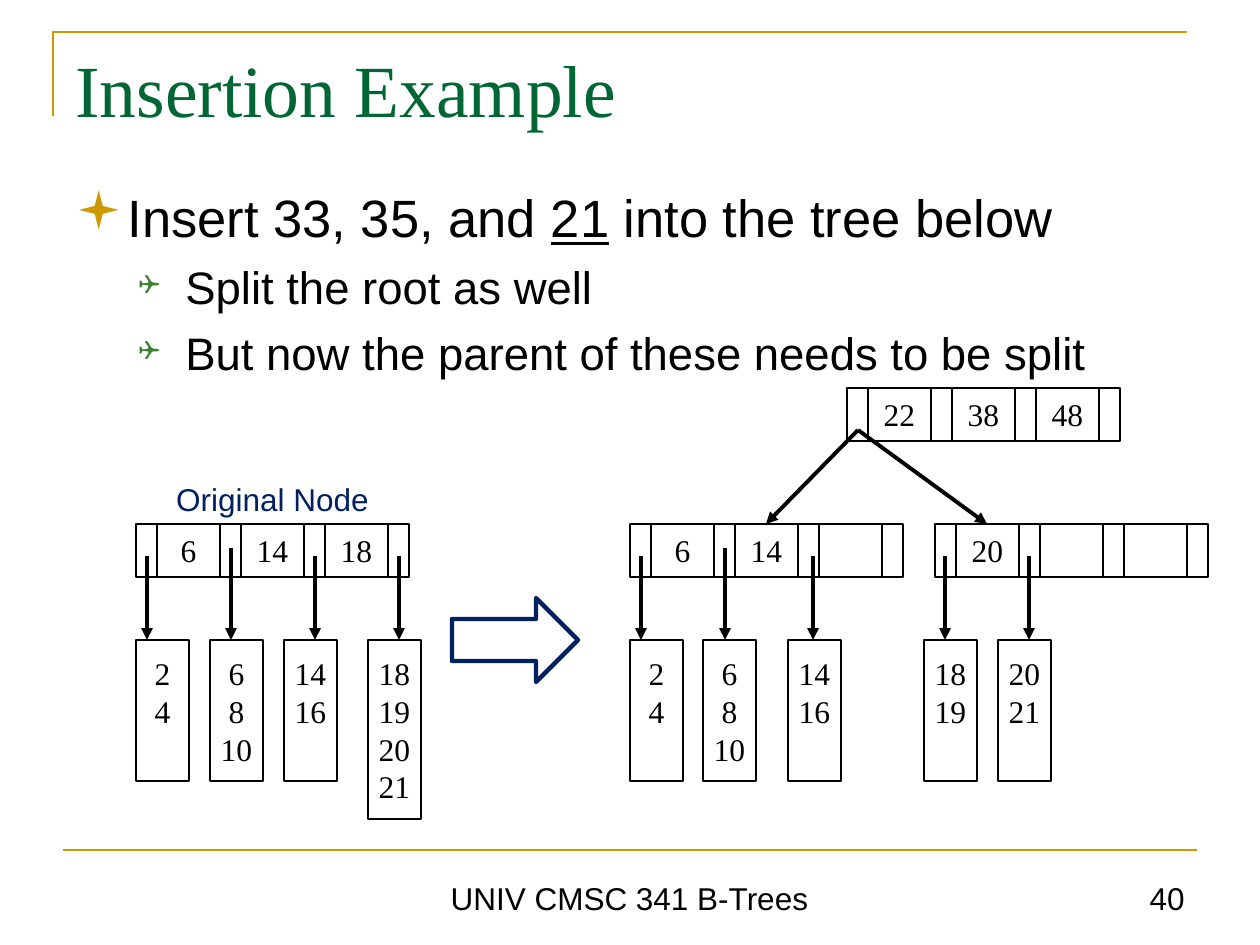
from lxml.etree import SubElement
from pptx import Presentation
from pptx.dml.color import RGBColor
from pptx.enum.shapes import MSO_CONNECTOR as Connector, MSO_SHAPE as Preset
from pptx.enum.text import MSO_ANCHOR as Anchor, PP_ALIGN as Align
from pptx.oxml.ns import qn
from pptx.util import Emu, Pt

SCALE = 914400 / 126
BLACK = RGBColor(0x00, 0x00, 0x00)
GOLD = RGBColor(0xCC, 0x99, 0x00)
DARK_GREEN = RGBColor(0x00, 0x66, 0x33)
LEAF_GREEN = RGBColor(0x3B, 0x81, 0x2F)
NAVY = RGBColor(0x00, 0x20, 0x60)
SANS, SERIF = "Arial", "Times New Roman"

POINTER, KEY, ROW = 21, 63, 53
NODE_TOP, LEAF_TOP = 524, 640
NODES = [
    (136, NODE_TOP, ["6", "14", "18"]),
    (630, NODE_TOP, ["6", "14", ""]),
    (935, NODE_TOP, ["20", "", ""]),
    (847, 388, ["22", "38", "48"]),
]
LEAVES = [
    (136, 147, 556, ["2", "4"]),
    (210, 231, 548, ["6", "8", "10"]),
    (284, 315, 556, ["14", "16"]),
    (368, 399, 556, ["18", "19", "20", "21"]),
    (630, 641, 556, ["2", "4"]),
    (703, 725, 548, ["6", "8", "10"]),
    (788, 813, 556, ["14", "16"]),
    (924, 945, 556, ["18", "19"]),
    (998, 1029, 556, ["20", "21"]),
]
BULLETS = [
    ([("Insert 33, 35, and ", False), ("21", True), (" into the tree below", False)], 0),
    ([("Split the root as well", False)], 1),
    ([("But now the parent of these needs to be split", False)], 1),
]


def px(length):
    """Turn pixels into EMU."""
    return Emu(round(length * SCALE))


def write(para, text, size=18, font=SANS, color=BLACK, align=Align.LEFT, underline=False):
    """Add one formatted span to a paragraph."""
    para.alignment = align
    span = para.add_run()
    span.text = text
    span.font.size = Pt(size)
    span.font.name = font
    span.font.color.rgb = color
    span.font.underline = underline


def add_text_box(page, left, top, width, height, text="", anchor=Anchor.TOP, **style):
    """Add a wrapping text box and return its frame."""
    frame = page.shapes.add_textbox(px(left), px(top), px(width), px(height)).text_frame
    frame.word_wrap = True
    frame.vertical_anchor = anchor
    if text:
        write(frame.paragraphs[0], text, **style)
    return frame


def outline(shape, color, width):
    """Leave a shape hollow with a plain line."""
    shape.shadow.inherit = False
    shape.fill.background()
    shape.line.color.rgb = color
    shape.line.width = Pt(width)


def add_cell(page, left, top, width, height, values=(), anchor=Anchor.MIDDLE, inset=6):
    """Add a rectangle that lists values one per line."""
    cell = page.shapes.add_shape(Preset.RECTANGLE, px(left), px(top), px(width), px(height))
    outline(cell, BLACK, 0.75)
    frame = cell.text_frame
    frame.word_wrap = False
    frame.vertical_anchor = anchor
    frame.margin_top = px(inset)
    for index, value in enumerate(values):
        para = frame.add_paragraph() if index else frame.paragraphs[0]
        write(para, value, font=SERIF, align=Align.CENTER)


def add_line(page, start, end, color=BLACK, width=2.25, arrow=True):
    """Add a straight line, with an arrowhead at its end if wanted."""
    line = page.shapes.add_connector(Connector.STRAIGHT, *map(px, start + end))
    line.line.color.rgb = color
    line.line.width = Pt(width)
    if arrow:
        SubElement(line.line._get_or_add_ln(), qn("a:tailEnd"), type="triangle")
    SubElement(line._element.spPr, qn("a:effectLst"))


def add_node(page, left, top, keys):
    """Add an inner node of alternating pointer and key cells."""
    step = POINTER + KEY
    for index, key in enumerate(keys):
        start = left + index * step
        add_cell(page, start + POINTER, top, KEY, ROW, [key] if key else [])
        add_cell(page, start, top, POINTER, ROW)
    add_cell(page, left + len(keys) * step, top, POINTER, ROW)


def add_leaf(page, left, arrow_x, arrow_top, values):
    """Add a leaf and the arrow that points to it."""
    height = 179 if len(values) > 3 else 141
    add_cell(page, left, LEAF_TOP, ROW, height, values, anchor=Anchor.TOP, inset=14)
    add_line(page, (arrow_x, arrow_top), (arrow_x, LEAF_TOP))


def set_bullet(para, level):
    """Give a paragraph its indent, spacing and bullet."""
    left, space, color, percent, mark = [
        (47, 7.5, GOLD, 100, "▪"),
        (110, 6.5, LEAF_GREEN, 60, "❑"),
    ][level]
    para.level = level
    para.space_before = Pt(space)
    props = para._p.get_or_add_pPr()
    props.set("marL", str(px(left)))
    props.set("indent", str(px(-47)))
    SubElement(SubElement(props, qn("a:buClr")), qn("a:srgbClr"), val=str(color))
    SubElement(props, qn("a:buSzPct"), val=str(percent * 1000))
    SubElement(props, qn("a:buFont"), typeface="Wingdings")
    SubElement(props, qn("a:buChar"), char=mark)


def add_bullets(page):
    """Add the bulleted body text."""
    frame = add_text_box(page, 63, 179, 1133, 136)
    for index, (spans, level) in enumerate(BULLETS):
        para = frame.add_paragraph() if index else frame.paragraphs[0]
        for text, underline in spans:
            write(para, text, size=26 if level else 30, underline=underline)
        set_bullet(para, level)


def add_frame(page):
    """Add the gold corner and the footer rule."""
    builder = page.shapes.build_freeform(53, 116, scale=SCALE)
    builder.add_line_segments([(53, 32), (1187, 32)], close=False)
    outline(builder.convert_to_shape(), GOLD, 1.5)
    add_line(page, (63, 850), (1197, 850), color=GOLD, width=1.5, arrow=False)


def main():
    """Build the slide and save it."""
    deck = Presentation()
    deck.slide_width, deck.slide_height = px(1260), px(945)
    page = deck.slides.add_slide(deck.slide_layouts[6])
    add_frame(page)
    add_text_box(page, 63, 38, 1133, 140, "Insertion Example", size=42, font=SERIF, color=DARK_GREEN)
    add_bullets(page)
    add_text_box(page, 220, 861, 819, 62, "UNIV CMSC 341 B-Trees", Anchor.BOTTOM, align=Align.CENTER)
    add_text_box(page, 903, 861, 294, 62, "40", Anchor.BOTTOM, align=Align.RIGHT)
    for node in NODES:
        add_node(page, *node)
    for leaf in LEAVES:
        add_leaf(page, *leaf)
    for child_x in (766, 987):
        add_line(page, (858, 430), (child_x, NODE_TOP))
    add_text_box(page, 73, 474, 399, 50, "Original Node", color=NAVY, align=Align.CENTER)
    arrow = page.shapes.add_shape(Preset.RIGHT_ARROW, px(452), px(598), px(126), px(84))
    outline(arrow, NAVY, 2.5)
    deck.save("out.pptx")


if __name__ == "__main__":
    main()
